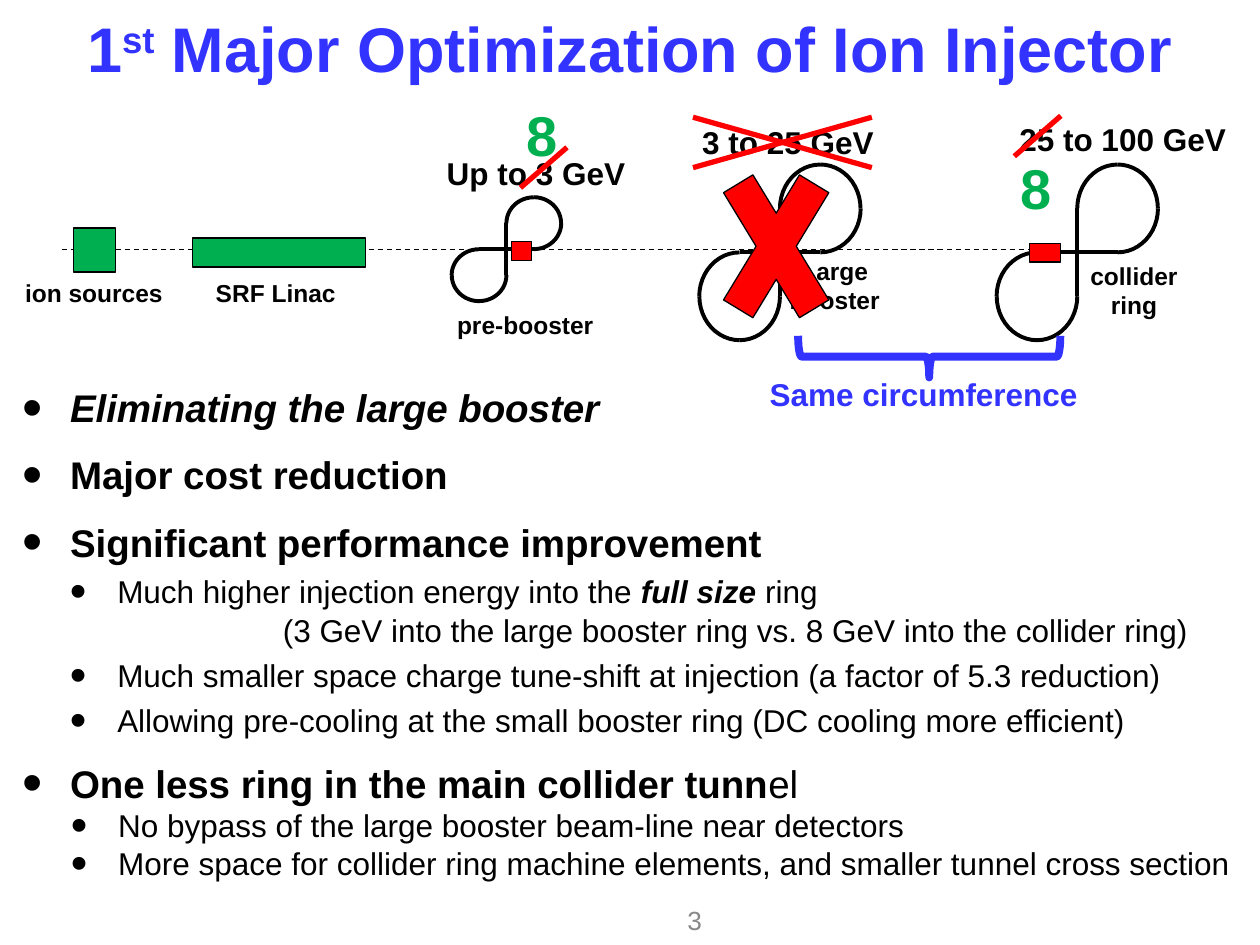
from lxml.etree import SubElement
from pptx import Presentation
from pptx.dml.color import RGBColor
from pptx.enum.dml import MSO_LINE_DASH_STYLE as DASH
from pptx.enum.shapes import MSO_CONNECTOR, MSO_SHAPE as SHAPE
from pptx.enum.text import MSO_ANCHOR as ANCHOR, MSO_AUTO_SIZE as AUTO, PP_ALIGN as ALIGN
from pptx.oxml.ns import qn
from pptx.util import Pt

BLACK, BLUE, GREEN, RED, GRAY = "000000", "3333FF", "00B050", "FF0000", "898989"


def rgb(value):
    """Turn a hex string into a colour."""
    return RGBColor.from_string(value)


def add_run(p, text, size=18, color=BLACK, bold=False, italic=False, raised=0):
    """Append a formatted run to a paragraph."""
    r = p.add_run()
    r.text = text
    r.font.name = "Arial"
    r.font.size = Pt(size)
    r.font.color.rgb = rgb(color)
    r.font.bold = bold
    r.font.italic = italic
    if raised:
        r.font._element.set("baseline", str(raised * 1000))


def place(sp, box):
    """Move a shape to a box of left, top, width and height."""
    sp.left, sp.top, sp.width, sp.height = map(Pt, box)


def add_label(slide, text, box, align=ALIGN.CENTER, anchor=ANCHOR.TOP, **style):
    """Add a wrapped text box with one run."""
    tf = slide.shapes.add_textbox(*map(Pt, box)).text_frame
    tf.word_wrap = True
    tf.vertical_anchor = anchor
    p = tf.paragraphs[0]
    p.alignment = align
    add_run(p, text, **style)


def add_shape(slide, kind, box, fill=None, line=BLACK, width=0.75, rotation=0):
    """Add a flat preset shape."""
    sp = slide.shapes.add_shape(kind, *map(Pt, box))
    sp.shadow.inherit = False
    if fill:
        sp.fill.solid()
        sp.fill.fore_color.rgb = rgb(fill)
    else:
        sp.fill.background()
    sp.line.color.rgb = rgb(line)
    sp.line.width = Pt(width)
    sp.rotation = rotation
    return sp


def add_line(slide, x1, y1, x2, y2, color=BLACK, width=2.25, dash=None):
    """Add a straight connector without a shadow."""
    cxn = slide.shapes.add_connector(MSO_CONNECTOR.STRAIGHT, *map(Pt, (x1, y1, x2, y2)))
    cxn.line.color.rgb = rgb(color)
    cxn.line.width = Pt(width)
    if dash:
        cxn.line.dash_style = dash
    SubElement(cxn._element.spPr, qn("a:effectLst"))


def add_loop(slide, box, rotations):
    """Draw quarter arcs of one ellipse, swapping sides for quarter turns."""
    x, y, w, h = box
    turned = (x + (w - h) / 2, y + (h - w) / 2, h, w)
    for rotation in rotations:
        add_shape(slide, SHAPE.ARC, turned if rotation % 180 else box,
                  width=2.25, rotation=rotation)


def add_figure_eight(slide, cx, cy, w, h):
    """Draw a figure-eight ring crossing at its centre."""
    add_line(slide, cx, cy - h / 2, cx, cy + h / 2)
    add_loop(slide, (cx, cy - h, w, h), (0, 270, 90))
    add_loop(slide, (cx - w, cy, w, h), (180, 90, 270))
    add_line(slide, cx + w / 2, cy, cx - w / 2, cy)


def add_title(slide, box):
    """Fill the title placeholder."""
    sp = slide.shapes.title
    place(sp, box)
    tf = sp.text_frame
    tf.auto_size = AUTO.NONE
    tf.vertical_anchor = ANCHOR.MIDDLE
    p = tf.paragraphs[0]
    p.alignment = ALIGN.CENTER
    style = dict(size=36, color=BLUE, bold=True)
    add_run(p, "1", **style)
    add_run(p, "st", raised=30, **style)
    add_run(p, " Major Optimization of Ion Injector", **style)


def add_injector(slide, box):
    """Draw the injector chain with its energies and corrections."""
    x, y = box[:2]

    def at(left, top, *size):
        return (x + left, y + top, *size)

    add_line(slide, *at(35.3, 88.6), *at(606.2, 88.6), width=0.75, dash=DASH.DASH)
    for spot in ((41.8, 76.3, 24.4, 25.2), (110.2, 82.1, 98.6, 16.5)):
        add_shape(slide, SHAPE.RECTANGLE, at(*spot), GREEN)
    for ring in ((289.4, 88.4, 31.3, 29.7), (445.7, 90.2, 46.1, 50.2), (615.6, 90.2, 46.1, 50.2)):
        add_figure_eight(slide, *at(*ring))

    for text, left, top, width, height in (
            ("ion sources", 5.8, 101.5, 95.8, 24.5), ("SRF Linac", 102.2, 101.5, 110.9, 24.5),
            ("pre-booster", 246.2, 119.5, 108, 24.5), ("Large booster", 432, 88.6, 90, 41),
            ("collider ring", 612, 91.4, 72, 41)):
        add_label(slide, text, at(left, top, width, height), size=14, bold=True)

    for spot in ((292.3, 84.2, 11.5, 10.8), (588.2, 85, 18, 10.8)):
        add_shape(slide, SHAPE.RECTANGLE, at(*spot), RED)
    add_shape(slide, SHAPE.MATH_MULTIPLY, at(401.8, 18, 83.5, 137.5), RED)

    for text, left, top, width in (("Up to 3 GeV", 246.2, 30.2, 120.2),
                                   ("3 to 25 GeV", 390.2, 13, 120.2),
                                   ("25 to 100 GeV", 569.5, 10.8, 144)):
        add_label(slide, text, at(left, top, width, 29), bold=True)
    for x1, y1, x2, y2 in ((297.4, 53.3, 324, 30.2), (396, 13, 498.2, 41.8),
                           (396, 41.8, 498.2, 13), (579.6, 35.3, 606.2, 12.2)):
        add_line(slide, *at(x1, y1), *at(x2, y2), color=RED, width=3)
    for left, top in ((288, 0), (570.2, 30.2)):
        add_label(slide, "8", at(left, top, 43.2, 46), size=32, color=GREEN, bold=True)

    add_shape(slide, SHAPE.LEFT_BRACE, at(519.1, 74.9, 23.8, 149.8),
              line=BLUE, width=4.5, rotation=270)
    add_label(slide, "Same circumference", at(419.8, 157, 216, 29), color=BLUE, bold=True)


def add_item(tf, runs, first=False, indent=27, before=0, bullet=True):
    """Add one list paragraph from pairs of text and format."""
    p = tf.paragraphs[0] if first else tf.add_paragraph()
    p.space_before = Pt(before)
    pPr = p._p.get_or_add_pPr()
    pPr.set("marL", str(Pt(indent)))
    pPr.set("indent", str(Pt(-27 if bullet else 0)))
    if bullet:
        SubElement(pPr, qn("a:buSzPct"), val="150000")
        SubElement(pPr, qn("a:buFont"), typeface="Arial")
        SubElement(pPr, qn("a:buChar"), char="•")
    else:
        SubElement(pPr, qn("a:buNone"))
    for text, style in runs:
        add_run(p, text, **style)


def add_benefits(slide, box):
    """Fill the body placeholder with the two-level list."""
    sp = slide.placeholders[1]
    place(sp, box)
    tf = sp.text_frame
    tf.auto_size = AUTO.NONE
    head = dict(size=22, bold=True)
    add_item(tf, [("Eliminating the large booster", dict(head, italic=True))], first=True)
    add_item(tf, [("Major cost reduction", head)], before=12)
    add_item(tf, [("Significant performance improvement", head)], before=12)
    add_item(tf, [("Much higher injection energy into the ", {}),
                  ("full size", dict(bold=True, italic=True)), (" ring", {})],
             indent=54, before=4)
    add_item(tf, [("(3 GeV into the large booster ring vs. 8 GeV into the collider ring)", {})],
             indent=148.6, before=1, bullet=False)
    for text in ("Much smaller space charge tune-shift at injection (a factor of 5.3 reduction)",
                 "Allowing pre-cooling at the small booster ring (DC cooling more efficient)"):
        add_item(tf, [(text, {})], indent=54, before=4)
    add_item(tf, [("One less ring in the main collider tunn", head), ("el", dict(size=22))],
             before=12)
    for text in ("No bypass of the large booster beam-line near detectors",
                 "More space for collider ring machine elements, and smaller tunnel cross section"):
        add_item(tf, [(text, {})], indent=54.5, before=0.2)


def main():
    """Build and save the slide."""
    prs = Presentation()
    prs.slide_width, prs.slide_height = Pt(720), Pt(540)
    slide = prs.slides.add_slide(prs.slide_layouts[1])
    add_benefits(slide, (5.8, 216, 714.2, 288))
    add_title(slide, (0, 0, 720, 54))
    add_label(slide, "3", (300.2, 511.2, 108, 28.8), align=ALIGN.RIGHT,
              anchor=ANCHOR.MIDDLE, size=15, color=GRAY)
    add_injector(slide, (0, 54, 720, 186))
    prs.save("out.pptx")


if __name__ == "__main__":
    main()
